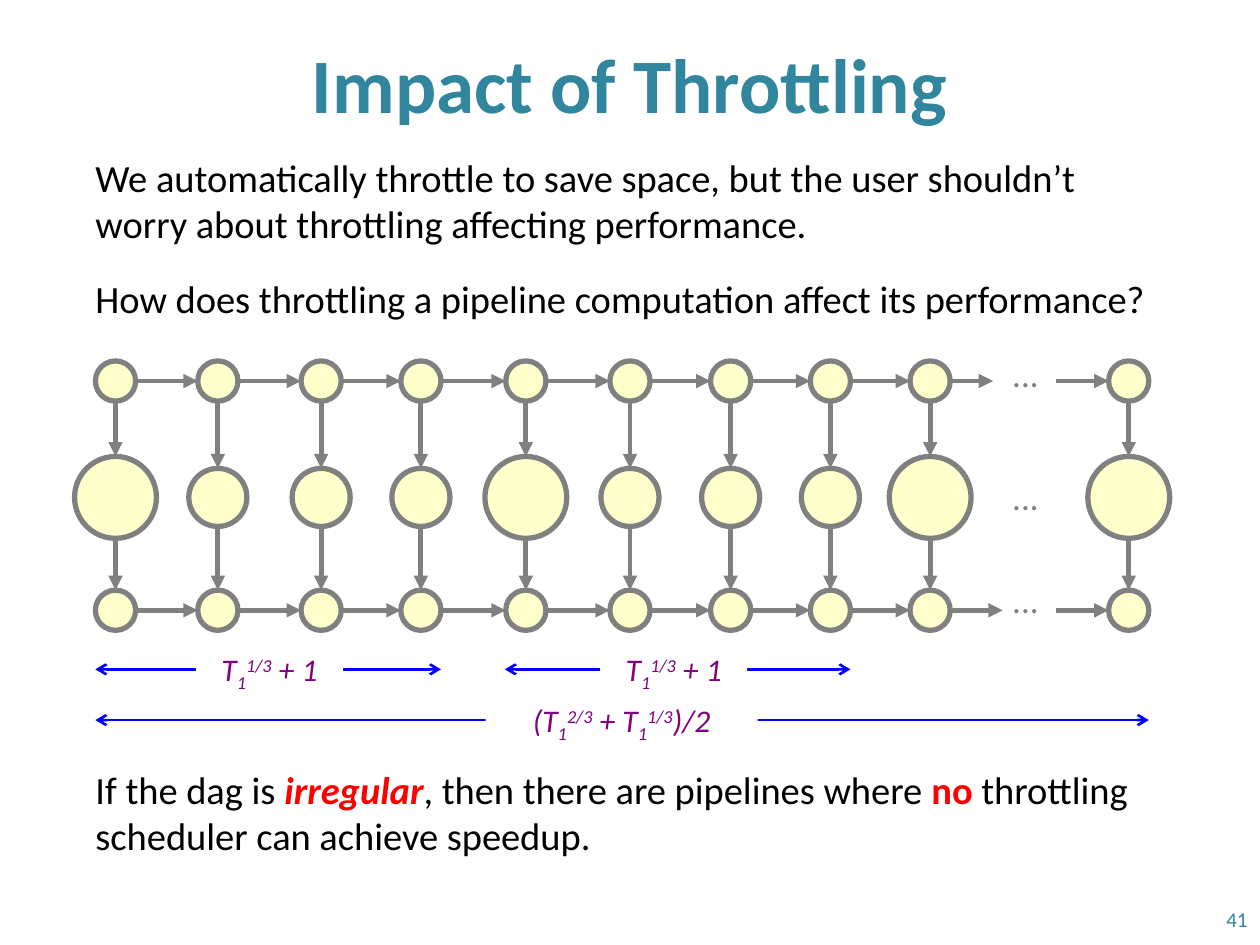
import dataclasses

import lxml.etree
import pptx
import pptx.dml.color
import pptx.enum.shapes
import pptx.enum.text
import pptx.oxml.ns
import pptx.util

Pt = pptx.util.Pt
Align = pptx.enum.text.PP_ALIGN
Anchor = pptx.enum.text.MSO_ANCHOR
Shape = pptx.enum.shapes.MSO_SHAPE


@dataclasses.dataclass(frozen=True)
class Theme:
    font: str = "Calibri"
    teal: str = "31859C"
    black: str = "000000"
    red: str = "FF0000"
    gray: str = "808080"
    cream: str = "FFFFCC"
    white: str = "FFFFFF"
    blue: str = "0000FF"
    purple: str = "800080"
    title_size: float = 44
    body_size: float = 22
    dots_size: float = 20
    label_size: float = 18
    number_size: float = 12


@dataclasses.dataclass(frozen=True)
class Box:
    left: float
    top: float
    width: float
    height: float

    def points(self):
        return Pt(self.left), Pt(self.top), Pt(self.width), Pt(self.height)


THEME = Theme()
SUB, SUPER = -25000, 30000
COLUMNS = (23.5, 82, 141, 198, 258, 317.5, 375, 432, 489, 602.5)
ROWS = (23, 89.5, 154)
SMALL, MEDIUM, LARGE = 11.5, 16.6, 23.4


def color(code):
    return pptx.dml.color.RGBColor.from_string(code)


def write(shape, spans, size, ink, align=Align.LEFT, anchor=Anchor.TOP, wrap=True):
    frame = shape.text_frame
    frame.word_wrap = wrap
    frame.vertical_anchor = anchor
    para = frame.paragraphs[0]
    para.alignment = align
    for text, style in spans:
        span = para.add_run()
        span.text = text
        span.font.name = THEME.font
        span.font.size = Pt(size)
        span.font.bold = style.get("bold", False)
        span.font.italic = style.get("italic", False)
        span.font.color.rgb = color(style.get("ink", ink))
        if "baseline" in style:
            span.font._element.set("baseline", str(style["baseline"]))


def text_box(page, box, spans, size, ink, **layout):
    write(page.shapes.add_textbox(*box.points()), spans, size, ink, **layout)


def arrow(shapes, start, end, ink, width, **ends):
    line = shapes.add_connector(
        pptx.enum.shapes.MSO_CONNECTOR.STRAIGHT, *map(Pt, (*start, *end))
    )
    line.line.color.rgb = color(ink)
    line.line.width = Pt(width)
    outline = line.line._get_or_add_ln()
    for name, kind in ends.items():
        lxml.etree.SubElement(outline, pptx.oxml.ns.qn(f"a:{name}End"), type=kind)
    lxml.etree.SubElement(line._element.spPr, pptx.oxml.ns.qn("a:effectLst"))


def node(page, x, y, radius):
    box = Box(x - radius, y - radius, 2 * radius, 2 * radius)
    circle = page.shapes.add_shape(Shape.OVAL, *box.points())
    circle.shadow.inherit = False
    circle.fill.solid()
    circle.fill.fore_color.rgb = color(THEME.cream)
    circle.line.color.rgb = color(THEME.gray)
    circle.line.width = Pt(3)


def pipeline(page, box):
    columns = [box.left + offset for offset in COLUMNS]
    rows = [box.top + offset for offset in ROWS]
    last = len(columns) - 1

    def edge(start, end):
        arrow(page.shapes, start, end, THEME.gray, 2.75, tail="triangle")

    for index, x in enumerate(columns):
        middle = LARGE if index % 4 == 0 or index == last else MEDIUM
        radii = (SMALL, middle, SMALL)
        for upper in range(2):
            lower = upper + 1
            edge((x, rows[upper] + radii[upper]), (x, rows[lower] - radii[lower]))
        for y, radius in zip(rows, radii):
            node(page, x, y, radius)

    for y, gap_start in ((rows[0], 567.5), (rows[2], 573)):
        for left, right in zip(columns[:-2], columns[1:-1]):
            edge((left + SMALL, y), (right - SMALL, y))
        edge((columns[-2] + SMALL, y), (gap_start, y))
        edge((603.5, y), (columns[-1] - SMALL, y))

    for y, rise in zip(rows, (20, 16, 22)):
        text_box(page, Box(571, y - rise, 30, 31.5), [("...", {})], THEME.dots_size,
                 THEME.gray, align=Align.CENTER, wrap=False)


def measure(page, box, label_left, label_width, spans):
    group = page.shapes.add_group_shape()
    y = box.top + box.height / 2
    arrow(group.shapes, (box.left, y), (box.left + box.width, y),
          THEME.blue, 1.5, head="arrow", tail="arrow")
    label_box = Box(box.left + label_left, box.top, label_width, box.height)
    label = group.shapes.add_shape(Shape.RECTANGLE, *label_box.points())
    label.shadow.inherit = False
    label.fill.solid()
    label.fill.fore_color.rgb = color(THEME.white)
    label.line.fill.background()
    write(label, spans, THEME.label_size, THEME.purple, align=Align.CENTER)


def formula(*parts):
    return [
        (text, {"italic": True, "baseline": base} if base else {"italic": True})
        for text, base in parts
    ]


def measures(page, box):
    short = formula(("T", 0), ("1", SUB), ("1/3", SUPER), (" + 1", 0))
    total = formula(("(T", 0), ("1", SUB), ("2/3", SUPER), (" + T", 0),
                    ("1", SUB), ("1/3", SUPER), (")/2", 0))
    for offset, label_left in ((0, 57.5), (234, 54.5)):
        measure(page, Box(box.left + offset, box.top, 197.5, 29), label_left, 84, short)
    measure(page, Box(box.left, box.top + 29, box.width, 29), 223, 155.5, total)


def build():
    deck = pptx.Presentation()
    deck.slide_width, deck.slide_height = Pt(720), Pt(540)
    page = deck.slides.add_slide(deck.slide_layouts[6])

    text_box(page, Box(36, 2, 648, 90), [("Impact of Throttling", {"bold": True})],
             THEME.title_size, THEME.teal, align=Align.CENTER, anchor=Anchor.MIDDLE)
    text_box(page, Box(552, 510.5, 168, 29), [("41", {})],
             THEME.number_size, THEME.teal, align=Align.RIGHT, anchor=Anchor.MIDDLE)
    pipeline(page, Box(42.5, 194.75, 626.5, 170))
    measures(page, Box(54.5, 368, 602, 58))

    statements = (
        (84.5, 60.5, [("We automatically throttle to save space, but the user "
                       "shouldn’t worry about throttling affecting performance.", {})]),
        (153.5, 34, [("How does throttling a pipeline computation affect its "
                      "performance?", {})]),
        (434, 60.5, [("If the dag is ", {}),
                     ("irregular", {"bold": True, "italic": True, "ink": THEME.red}),
                     (", then there are pipelines where ", {}),
                     ("no", {"bold": True, "ink": THEME.red}),
                     (" throttling scheduler can achieve speedup.", {})]),
    )
    for top, height, spans in statements:
        text_box(page, Box(47.5, top, 623.5, height), spans, THEME.body_size, THEME.black)
    deck.save("out.pptx")


if __name__ == "__main__":
    build()
